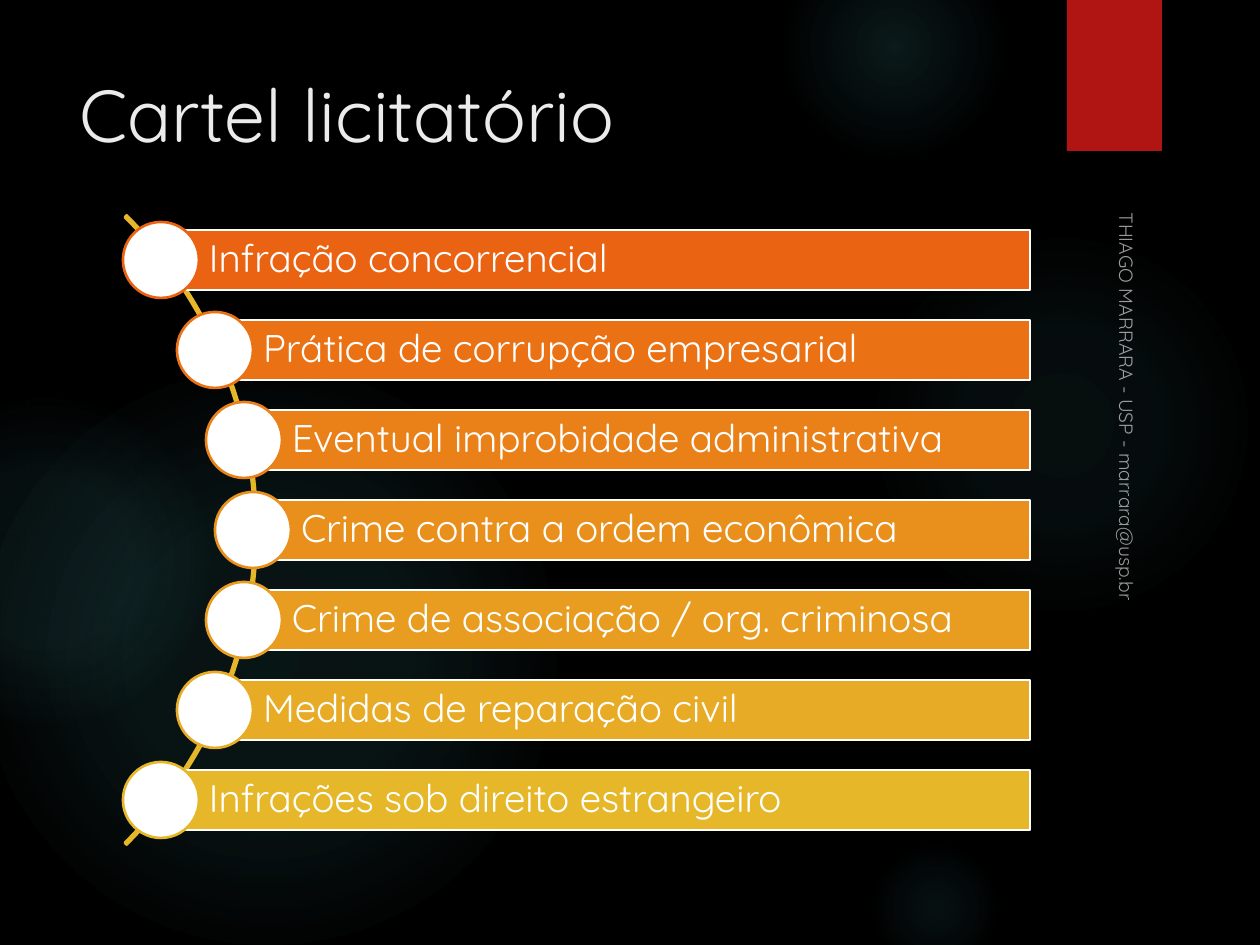
"""Build the "Cartel licitatório" slide: seven offences along an arc on a dark backdrop."""
from dataclasses import dataclass
from math import sqrt

from lxml.etree import SubElement
from pptx import Presentation
from pptx.dml.color import RGBColor
from pptx.enum.shapes import MSO_SHAPE as Shape
from pptx.enum.text import MSO_ANCHOR as Anchor, PP_ALIGN as Align
from pptx.oxml import parse_xml
from pptx.oxml.ns import nsdecls, qn
from pptx.util import Pt

PX = 914400 // 126


@dataclass(frozen=True)
class Theme:
    font: str = "Quicksand"
    background: str = "000000"
    glow: str = "50B9C1"
    ribbon: str = "B01513"
    title: str = "EBEBEB"
    white: str = "FFFFFF"
    arc: str = "E6B729"
    title_size: int = 42
    item_size: int = 22
    footer_size: int = 11
    line_width: float = 1.5


theme = Theme()


def add_shape(kind, left, top, width, height, fill=None, line=None):
    shape = slide.shapes.add_shape(kind, left * PX, top * PX, width * PX, height * PX)
    shape.shadow.inherit = False
    if fill:
        shape.fill.solid()
        shape.fill.fore_color.rgb = RGBColor.from_string(fill)
    else:
        shape.fill.background()
    if line:
        shape.line.color.rgb = RGBColor.from_string(line)
        shape.line.width = Pt(theme.line_width)
    else:
        shape.line.fill.background()
    return shape


def write(shape, text, size, color, anchor):
    frame = shape.text_frame
    frame.text = text
    frame.word_wrap = True
    frame.vertical_anchor = anchor
    paragraph = frame.paragraphs[0]
    paragraph.alignment = Align.LEFT
    paragraph.font.name = theme.font
    paragraph.font.size = Pt(size)
    paragraph.font.color.rgb = RGBColor.from_string(color)
    return paragraph


presentation = Presentation()
presentation.slide_width, presentation.slide_height = 1260 * PX, 945 * PX
slide = presentation.slides.add_slide(presentation.slide_layouts[5])
slide.background.fill.solid()
slide.background.fill.fore_color.rgb = RGBColor.from_string(theme.background)

# left, top, diameter, centre opacity, middle opacity, fade-out stop
glows = [
    (868, 231, 388, 7, 6, 69),
    (784, -63, 220, 14, 7, 73),
    (868, 840, 136, 9, 5, 66),
    (-21, 368, 577, 11, 10, 75),
    (-116, 399, 325, 8, 8, 72),
]
for left, top, diameter, inner, middle, edge in glows:
    glow = add_shape(Shape.OVAL, left, top, diameter, diameter)
    stops = "".join(
        f'<a:gs pos="{position * 1000}"><a:srgbClr val="{theme.glow}">'
        f'<a:alpha val="{opacity * 1000}"/></a:srgbClr></a:gs>'
        for position, opacity in [(0, inner), (36, middle), (edge, 0)]
    )
    gradient = parse_xml(
        f'<a:gradFill {nsdecls("a")}><a:gsLst>{stops}</a:gsLst><a:path path="circle">'
        '<a:fillToRect l="50000" t="50000" r="50000" b="50000"/></a:path></a:gradFill>'
    )
    properties = glow.element.spPr
    properties.replace(properties.find(qn("a:noFill")), gradient)

add_shape(Shape.RECTANGLE, 1067, 0, 95, 151, theme.ribbon)

title = slide.shapes.title
title.left, title.top, title.width, title.height = 67 * PX, 63 * PX, 973 * PX, 193 * PX
write(title, "Cartel licitatório", theme.title_size, theme.title, Anchor.TOP)

footer = slide.shapes.add_textbox(859 * PX, 450 * PX, 532 * PX, 32 * PX)
footer.rotation = 90
paragraph = write(footer, "THIAGO MARRARA - USP - marrara@usp.br",
                  theme.footer_size, theme.white, Anchor.BOTTOM)
footer_color = paragraph.font.fill._xPr.find(qn("a:solidFill"))[0]
SubElement(footer_color, qn("a:alpha")).set("val", "60000")

center_x, center_y, arc_radius, track_radius = -188, 530, 445, 441
arc = add_shape(Shape.BLOCK_ARC, center_x - arc_radius, center_y - arc_radius,
                2 * arc_radius, 2 * arc_radius, line=theme.arc)
for index, value in enumerate([189, 27, 0.003]):
    arc.adjustments[index] = value

items = [
    ("Infração concorrencial", "EA6312"),
    ("Prática de corrupção empresarial", "EB7214"),
    ("Eventual improbidade administrativa", "EA8118"),
    ("Crime contra a ordem econômica", "E9901C"),
    ("Crime de associação / org. criminosa", "E89D21"),
    ("Medidas de reparação civil", "E7AB25"),
    ("Infrações sob direito estrangeiro", "E6B729"),
]
pitch, bar_height, bar_right, diameter = 90, 60, 1030, 76
for index, (text, color) in enumerate(items):
    offset = (index - len(items) // 2) * pitch
    x = center_x + round(sqrt(track_radius**2 - offset**2))
    y = center_y + offset
    bar = add_shape(Shape.RECTANGLE, x, y - bar_height // 2,
                    bar_right - x, bar_height, color, theme.white)
    paragraph = write(bar, text, theme.item_size, theme.white, Anchor.MIDDLE)
    paragraph.line_spacing = 0.9
    frame = bar.text_frame
    frame.margin_left = 48 * PX
    frame.margin_top = frame.margin_right = frame.margin_bottom = 7 * PX
    add_shape(Shape.OVAL, x - diameter // 2, y - diameter // 2,
              diameter, diameter, theme.white, color)

presentation.save("out.pptx")
